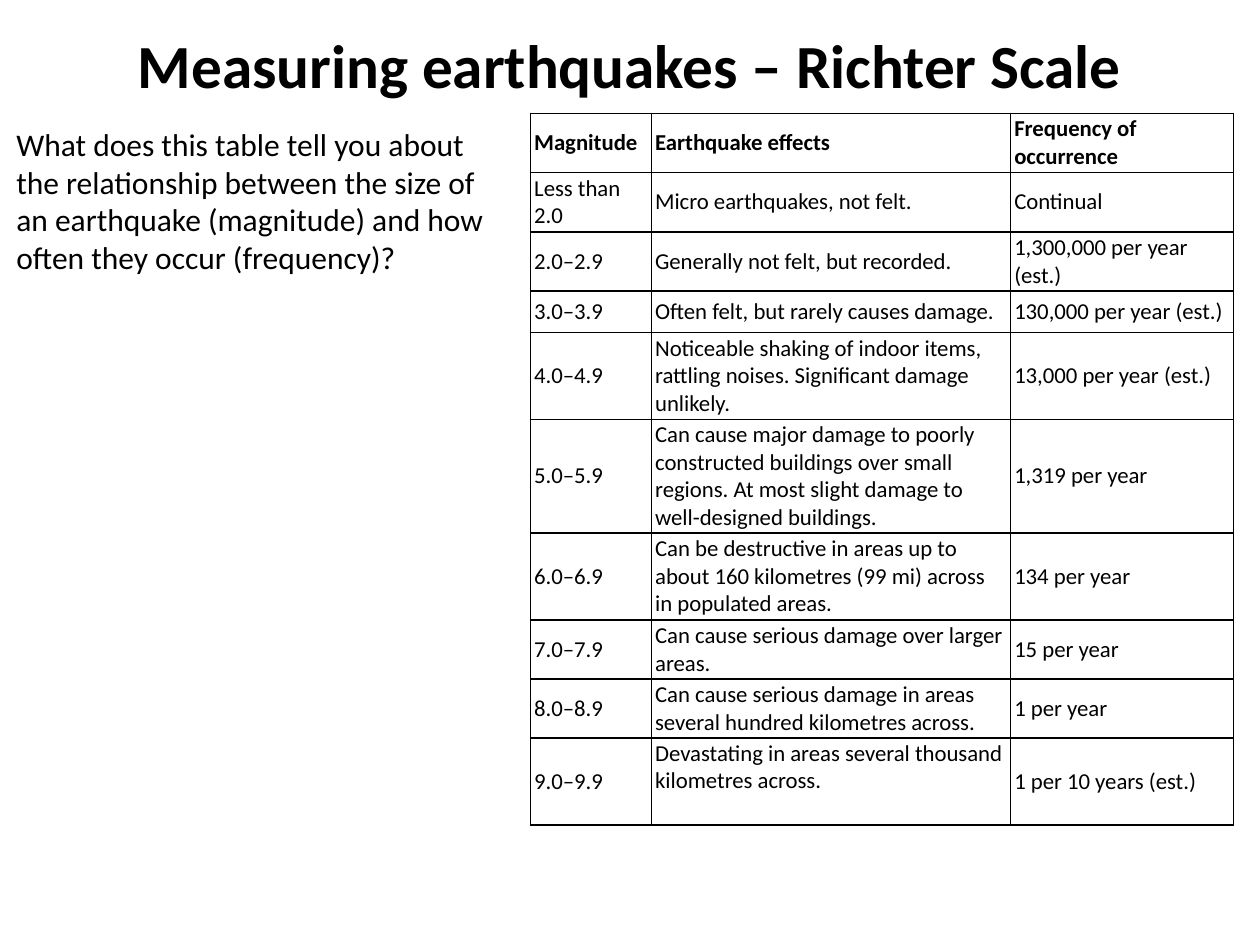
from dataclasses import dataclass

from lxml.etree import SubElement
from pptx import Presentation
from pptx.dml.color import RGBColor
from pptx.enum.text import MSO_ANCHOR, MSO_AUTO_SIZE, PP_ALIGN
from pptx.oxml.ns import qn
from pptx.util import Inches, Pt

GRID_COLS, GRID_ROWS = 100, 75


@dataclass(frozen=True)
class Theme:
    font: str = "Calibri"
    ink: RGBColor = RGBColor(0, 0, 0)
    paper: RGBColor = RGBColor(255, 255, 255)
    title_size: int = 35
    body_size: int = 18
    table_size: int = 13
    border: int = 1


def write(tf, text, theme, size, bold=False, align=PP_ALIGN.LEFT, anchor=MSO_ANCHOR.TOP):
    """Fill a text frame with one formatted paragraph."""
    tf.word_wrap = True
    tf.vertical_anchor = anchor
    p = tf.paragraphs[0]
    p.alignment = align
    p.space_before = Pt(0)
    r = p.add_run()
    r.text = text
    r.font.name = theme.font
    r.font.size = Pt(size)
    r.font.bold = bold
    r.font.color.rgb = theme.ink
    return p


def add_borders(cell, color, width):
    tc_pr = cell._tc.get_or_add_tcPr()
    for side in ("lnL", "lnR", "lnT", "lnB"):
        ln = SubElement(tc_pr, qn(f"a:{side}"), w=str(Pt(width)))
        fill = SubElement(ln, qn("a:solidFill"))
        SubElement(fill, qn("a:srgbClr"), val=str(color))


class SlideBuilder:
    """Places elements by columns and rows of the slide grid."""

    def __init__(self, prs, theme):
        self.theme = theme
        self.unit_x = prs.slide_width / GRID_COLS
        self.unit_y = prs.slide_height / GRID_ROWS
        self.s = prs.slides.add_slide(prs.slide_layouts[1])
        self.s.background.fill.solid()
        self.s.background.fill.fore_color.rgb = theme.paper

    def x(self, cols):
        return round(cols * self.unit_x)

    def y(self, rows):
        return round(rows * self.unit_y)

    def place(self, sp, col, row, width, height):
        sp.left, sp.top = self.x(col), self.y(row)
        sp.width, sp.height = self.x(width), self.y(height)
        sp.text_frame.auto_size = MSO_AUTO_SIZE.NONE

    def title(self, text, *box):
        sp = self.s.shapes.title
        self.place(sp, *box)
        write(sp.text_frame, text, self.theme, self.theme.title_size, bold=True,
              align=PP_ALIGN.CENTER, anchor=MSO_ANCHOR.MIDDLE)

    def body(self, text, *box):
        sp = self.s.placeholders[1]
        self.place(sp, *box)
        p = write(sp.text_frame, text, self.theme, self.theme.body_size)
        p_pr = p._p.get_or_add_pPr()
        p_pr.set("marL", "0")
        p_pr.set("indent", "0")
        SubElement(p_pr, qn("a:buNone"))

    def table(self, rows, col, row, widths, heights, top_cells=()):
        """Draw a ruled table; top_cells lists the (row, column) cells anchored at the top."""
        table = self.s.shapes.add_table(
            len(rows), len(widths), self.x(col), self.y(row),
            self.x(sum(widths)), self.y(sum(heights))).table
        table.first_row = table.horz_banding = False
        for column, width in zip(table.columns, widths):
            column.width = self.x(width)
        for table_row, height in zip(table.rows, heights):
            table_row.height = self.y(height)
        for i, texts in enumerate(rows):
            for j, text in enumerate(texts):
                anchor = MSO_ANCHOR.TOP if (i, j) in top_cells else MSO_ANCHOR.MIDDLE
                self.cell(table.cell(i, j), text, bold=i == 0, anchor=anchor)

    def cell(self, cell, text, bold, anchor):
        cell.margin_left = cell.margin_right = Inches(0.03)
        cell.margin_top = cell.margin_bottom = Inches(0.01)
        write(cell.text_frame, text, self.theme, self.theme.table_size, bold=bold)
        cell.vertical_anchor = anchor
        add_borders(cell, self.theme.ink, self.theme.border)
        cell.fill.background()


RICHTER = [
    ("Magnitude", "Earthquake effects", "Frequency of occurrence"),
    ("Less than 2.0", "Micro earthquakes, not felt.", "Continual"),
    ("2.0–2.9", "Generally not felt, but recorded.", "1,300,000 per year (est.)"),
    ("3.0–3.9", "Often felt, but rarely causes damage.", "130,000 per year (est.)"),
    ("4.0–4.9", "Noticeable shaking of indoor items, rattling noises. "
     "Significant damage unlikely.", "13,000 per year (est.)"),
    ("5.0–5.9", "Can cause major damage to poorly constructed buildings over small regions. "
     "At most slight damage to well-designed buildings.", "1,319 per year"),
    ("6.0–6.9", "Can be destructive in areas up to about 160 kilometres (99 mi) across "
     "in populated areas.", "134 per year"),
    ("7.0–7.9", "Can cause serious damage over larger areas.", "15 per year"),
    ("8.0–8.9", "Can cause serious damage in areas several hundred kilometres across.",
     "1 per year"),
    ("9.0–9.9", "Devastating in areas several thousand kilometres across.",
     "1 per 10 years (est.)"),
]
ROW_LINES = [2, 2, 2, 1, 3, 4, 3, 2, 2, 3]
HEIGHT_BY_LINES = {1: 3.3, 2: 4.7, 3: 6.9, 4: 9}


def main():
    prs = Presentation()
    prs.slide_width, prs.slide_height = Inches(10), Inches(7.5)
    slide = SlideBuilder(prs, Theme())
    slide.title("Measuring earthquakes – Richter Scale", 0, 1.6, 100, 6.9)
    slide.body("What does this table tell you about the relationship between the size of "
               "an earthquake (magnitude) and how often they occur (frequency)?",
               0.3, 9.4, 41.3, 13.1)
    slide.table(RICHTER, 42.1, 9, widths=[9.6, 28.5, 17.7],
                heights=[HEIGHT_BY_LINES[n] for n in ROW_LINES],
                top_cells={(len(RICHTER) - 1, 1)})
    prs.save("out.pptx")


if __name__ == "__main__":
    main()
